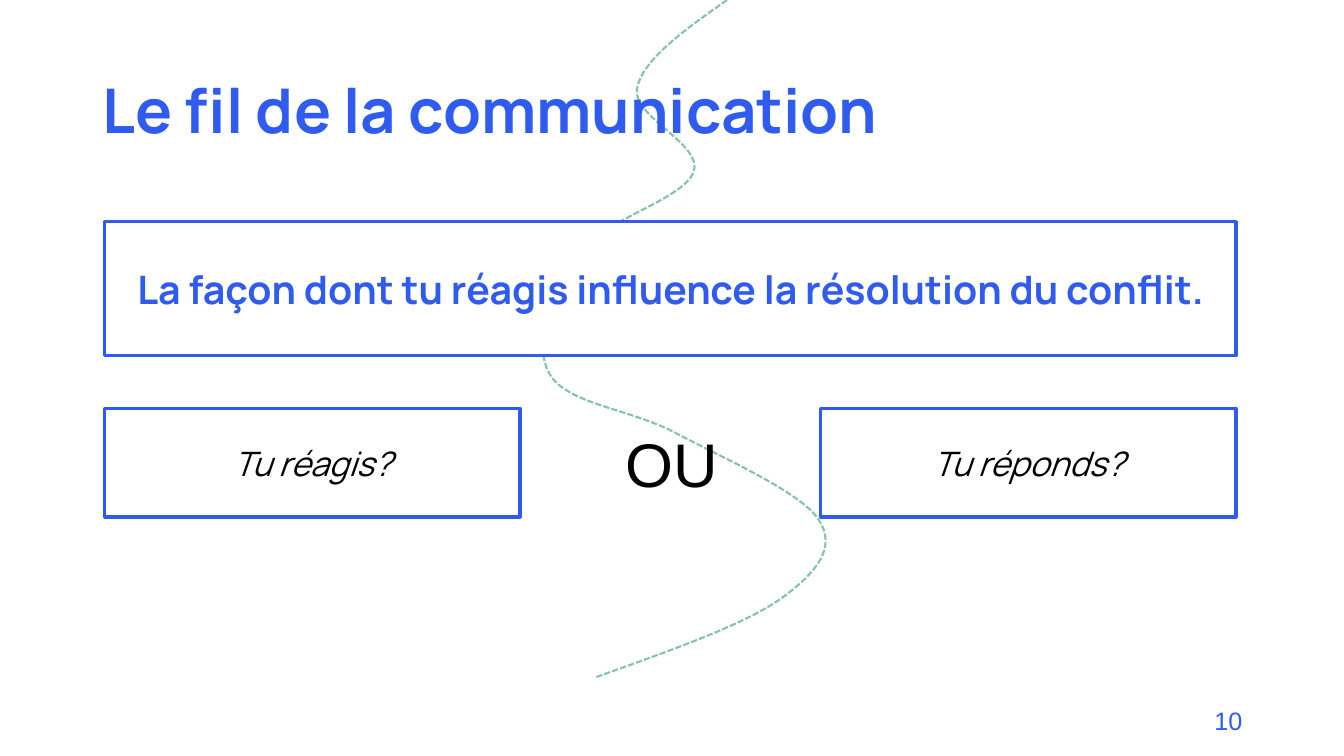
from dataclasses import dataclass
from pptx import Presentation
from pptx.dml.color import RGBColor
from pptx.enum.dml import MSO_LINE
from pptx.enum.shapes import MSO_SHAPE
from pptx.enum.text import MSO_ANCHOR, PP_ALIGN
from pptx.util import Inches, Pt


@dataclass(frozen=True)
class Theme:
    blue: RGBColor = RGBColor(0x2F, 0x5C, 0xEE)
    green: RGBColor = RGBColor(0x86, 0xC4, 0xA7)
    black: RGBColor = RGBColor(0, 0, 0)
    white: RGBColor = RGBColor(255, 255, 255)
    head: str = "Manrope"
    plain: str = "Arial"
    big: int = 44
    lead: int = 28
    body: int = 24
    small: int = 18
    frame: float = 2.25
    thread: float = 1.5


THEME = Theme()
WIDTH, HEIGHT = Inches(13.33), Inches(7.5)
STEPS = 16  # points drawn per curve piece

# Bezier nodes and handles, in percent of the slide: start, then three per piece
THREAD = [
    (54.1, 0),
    (50.9, 4), (47.8, 7.9), (47.4, 11.7),
    (47, 15.5), (52.4, 19.1), (51.6, 22.8),
    (50.8, 26.5), (44.5, 29.3), (42.7, 33.9),
    (40.9, 38.3), (39.6, 45.6), (40.9, 49.5),
    (42.2, 53.5), (47, 54.1), (50.3, 57.3),
    (53.7, 60.5), (59.6, 65.1), (60.9, 68.7),
    (62.3, 72.4), (60.8, 75.7), (58.1, 79.2),
    (55.3, 82.7), (49.8, 86.1), (44.3, 89.6),
]


def place(x, y, w, h):
    """Turn percent of the slide into lengths."""
    return [int(part * side / 100)
            for part, side in zip((x, y, w, h), (WIDTH, HEIGHT) * 2)]


def write(shape, text, size, color, font, align=PP_ALIGN.LEFT,
          bold=False, italic=False):
    frame = shape.text_frame
    frame.word_wrap = True
    frame.vertical_anchor = MSO_ANCHOR.MIDDLE
    frame.text = text
    line = frame.paragraphs[0]
    line.alignment = align
    face = line.runs[0].font
    face.name, face.size = font, Pt(size)
    face.bold, face.italic = bold, italic
    face.color.rgb = color
    return line


def label(slide, box, text, size, color, font, **style):
    shape = slide.shapes.add_textbox(*place(*box))
    return write(shape, text, size, color, font, **style)


def panel(slide, box, text, size, color, **style):
    shape = slide.shapes.add_shape(MSO_SHAPE.RECTANGLE, *place(*box))
    shape.shadow.inherit = False
    shape.fill.solid()
    shape.fill.fore_color.rgb = THEME.white
    shape.line.color.rgb = THEME.blue
    shape.line.width = Pt(THEME.frame)
    write(shape, text, size, color, THEME.head, align=PP_ALIGN.CENTER, **style)


def bezier(nodes, t):
    shares = ((1 - t) ** 3, 3 * t * (1 - t) ** 2, 3 * t * t * (1 - t), t ** 3)
    return [sum(s * node[axis] for s, node in zip(shares, nodes))
            for axis in (0, 1)]


def thread(slide, nodes):
    spots = [bezier(nodes[i:i + 4], step / STEPS)
             for i in range(0, len(nodes) - 1, 3)
             for step in range(1, STEPS + 1)]
    start, *rest = [place(x, y, 0, 0)[:2] for x, y in [nodes[0], *spots]]
    path = slide.shapes.build_freeform(*start)
    path.add_line_segments(rest, close=False)
    curve = path.convert_to_shape()
    curve.shadow.inherit = False
    curve.fill.background()
    curve.line.color.rgb = THEME.green
    curve.line.width = Pt(THEME.thread)
    curve.line.dash_style = MSO_LINE.SQUARE_DOT


def choices(slide, box, left, link, right):
    """Two panels at the ends of the box, with a word between them."""
    x, y, w, h = box
    part = 30.9
    for edge, text in ((x, left), (x + w - part, right)):
        panel(slide, (edge, y, part, h), text, THEME.body, THEME.black,
              italic=True)
    label(slide, (x + w / 2 - 4.1, y + 1.6, 10.2, h - 3.2), link,
          THEME.big, THEME.black, THEME.plain)


def main():
    deck = Presentation()
    deck.slide_width, deck.slide_height = WIDTH, HEIGHT
    slide = deck.slides.add_slide(deck.slide_layouts[6])
    left, wide = 7.8, 84.17

    # Thread behind everything, then page number and title
    thread(slide, THREAD)
    label(slide, (70.67, 92.67, 22.5, 5.33), "10", THEME.small, THEME.blue,
          THEME.plain, align=PP_ALIGN.RIGHT)
    title = label(slide, (6.9, 5.33, 86.27, 19.33), "Le fil de la communication",
                  THEME.big, THEME.blue, THEME.head, bold=True)
    title.line_spacing = 0.9

    # Key message and the two choices
    panel(slide, (left, 29.33, wide, 17.73),
          "La façon dont tu réagis influence la résolution du conflit.",
          THEME.lead, THEME.blue, bold=True)
    choices(slide, (left, 54, wide, 14.4), "Tu réagis?", "OU", "Tu réponds?")

    deck.save("out.pptx")


if __name__ == "__main__":
    main()
